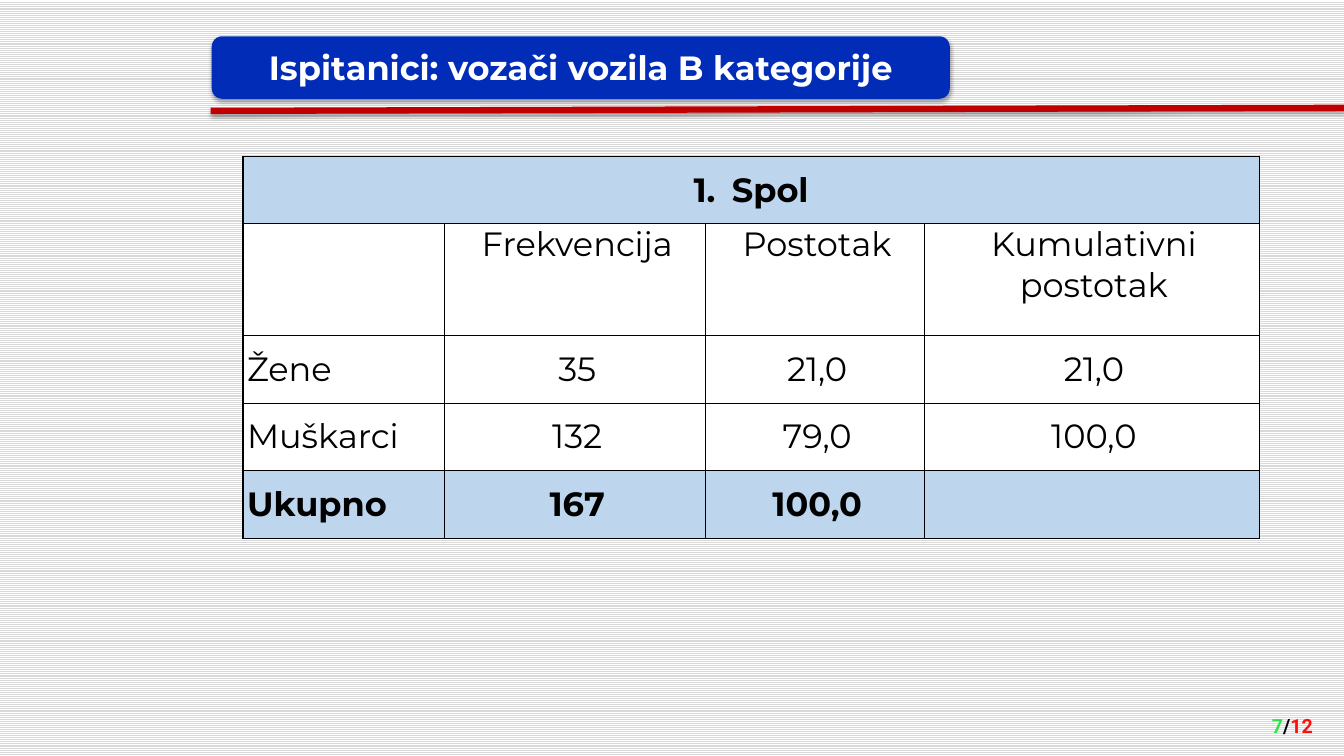
import dataclasses

import lxml.etree
import pptx
import pptx.dml.color
import pptx.enum.dml
import pptx.enum.shapes
import pptx.enum.text
import pptx.oxml.ns
import pptx.util

Inches = pptx.util.Inches
Align = pptx.enum.text.PP_ALIGN
Anchor = pptx.enum.text.MSO_ANCHOR


@dataclasses.dataclass(frozen=True)
class Theme:
    heading_font: str = "Montserrat"
    number_font: str = "Roboto"
    black: str = "000000"
    white: str = "FFFFFF"
    stripe: str = "D9D9D9"
    banner: str = "002CB8"
    rule: str = "C00000"
    accent: str = "BDD6EE"
    current: str = "2EE44C"
    total: str = "FF0F0F"
    body_size: int = 24
    number_size: int = 14


def rgb(value):
    return pptx.dml.color.RGBColor.from_string(value)


def add_node(parent, tag, **attributes):
    node = lxml.etree.SubElement(parent, pptx.oxml.ns.qn(tag))
    for name, value in attributes.items():
        node.set(name, str(value))
    return node


class SlideBuilder:
    def __init__(self, page, theme):
        self.page = page
        self.theme = theme

    def background(self):
        fill = self.page.background.fill
        fill.patterned()
        fill.pattern = pptx.enum.dml.MSO_PATTERN.LIGHT_HORIZONTAL
        fill.fore_color.rgb = rgb(self.theme.stripe)
        fill.back_color.rgb = rgb(self.theme.white)

    def shadow(self, properties):
        effects = add_node(properties, "a:effectLst")
        outer = add_node(effects, "a:outerShdw", blurRad=pptx.util.Pt(3.1),
                         dist=pptx.util.Pt(1.8), dir=90 * 60000, rotWithShape=0)
        color = add_node(outer, "a:srgbClr", val=self.theme.black)
        add_node(color, "a:alpha", val=35000)

    def style(self, para, font, size, color, bold, align):
        para.alignment = align
        para.font.name = font
        para.font.size = pptx.util.Pt(size)
        para.font.bold = bold
        if color:
            para.font.color.rgb = rgb(color)

    def rule(self, start, end):
        line = self.page.shapes.add_connector(
            pptx.enum.shapes.MSO_CONNECTOR.STRAIGHT, *map(Inches, start + end))
        line.line.color.rgb = rgb(self.theme.rule)
        line.line.width = pptx.util.Pt(4.5)
        self.shadow(line._element.spPr)

    def banner(self, text, *place):
        box = self.page.shapes.add_shape(
            pptx.enum.shapes.MSO_SHAPE.FLOWCHART_ALTERNATE_PROCESS, *map(Inches, place))
        box.fill.solid()
        box.fill.fore_color.rgb = rgb(self.theme.banner)
        box.line.fill.background()
        self.shadow(box._element.spPr)
        frame = box.text_frame
        frame.word_wrap = False
        frame.vertical_anchor = Anchor.MIDDLE
        para = frame.paragraphs[0]
        para.text = text
        self.style(para, self.theme.heading_font, self.theme.body_size,
                   self.theme.white, True, Align.CENTER)

    def page_number(self, spans, *place):
        frame = self.page.shapes.add_textbox(*map(Inches, place)).text_frame
        frame.word_wrap = True
        frame.vertical_anchor = Anchor.BOTTOM
        para = frame.paragraphs[0]
        for text, color in spans:
            span = para.add_run()
            span.text = text
            span.font.color.rgb = rgb(color)
        self.style(para, self.theme.number_font, self.theme.number_size,
                   None, True, Align.RIGHT)

    def cell(self, cell, text, fill, bold, align, anchor, numbered):
        cell.margin_left = cell.margin_right = cell.margin_top = cell.margin_bottom = 0
        cell.vertical_anchor = anchor
        properties = cell._tc.get_or_add_tcPr()
        for side in "LRTB":
            border = add_node(properties, f"a:ln{side}", w=pptx.util.Pt(1))
            add_node(add_node(border, "a:solidFill"), "a:srgbClr", val=self.theme.black)
        cell.fill.solid()
        cell.fill.fore_color.rgb = rgb(fill)
        para = cell.text_frame.paragraphs[0]
        para.text = text
        layout = para._p.get_or_add_pPr()
        layout.set("marL", str(Inches(0.38 if numbered else 0.04)))
        layout.set("indent", str(Inches(-0.38 if numbered else 0)))
        if numbered:
            add_node(layout, "a:buFont", typeface="+mj-lt")
            add_node(layout, "a:buAutoNum", type="arabicPeriod")
        self.style(para, self.theme.heading_font, self.theme.body_size,
                   self.theme.black, bold, align)

    def table(self, rows, widths, heights, *place):
        table = self.page.shapes.add_table(
            len(rows), len(widths), *map(Inches, place)).table
        table.horz_banding = table.first_row = False
        for column, width in zip(table.columns, widths):
            column.width = Inches(width)
        for row, height in zip(table.rows, heights):
            row.height = Inches(height)
        for i, texts in enumerate(rows):
            strong = i in (0, len(rows) - 1)
            for j, text in enumerate(texts):
                self.cell(
                    table.cell(i, j), text,
                    self.theme.accent if strong else self.theme.white, strong,
                    Align.LEFT if j == 0 and i > 0 else Align.CENTER,
                    Anchor.TOP if i == 1 else Anchor.MIDDLE,
                    i == 0 and j == 0)
        table.cell(0, 0).merge(table.cell(0, len(widths) - 1))


def main():
    deck = pptx.Presentation()
    deck.slide_width, deck.slide_height = Inches(13.33), Inches(7.5)
    theme = Theme()
    builder = SlideBuilder(deck.slides.add_slide(deck.slide_layouts[6]), theme)
    builder.background()
    builder.rule((2.09, 1.1), (13.33, 1.07))
    builder.page_number(
        [("7", theme.current), ("/", theme.black), ("12", theme.total)],
        10.34, 6.87, 2.78, 0.5)
    builder.banner("Ispitanici: vozači vozila B kategorije", 2.1, 0.36, 7.32, 0.62)
    rows = [
        ("Spol", "", "", ""),
        ("", "Frekvencija", "Postotak", "Kumulativni postotak"),
        ("Žene", "35", "21,0", "21,0"),
        ("Muškarci", "132", "79,0", "100,0"),
        ("Ukupno", "167", "100,0", ""),
    ]
    builder.table(rows, (2, 2.59, 2.17, 3.32), (0.67, 1.11, 0.67, 0.67, 0.67),
                  2.41, 1.55, 10.08, 3.79)
    deck.save("out.pptx")


if __name__ == "__main__":
    main()
